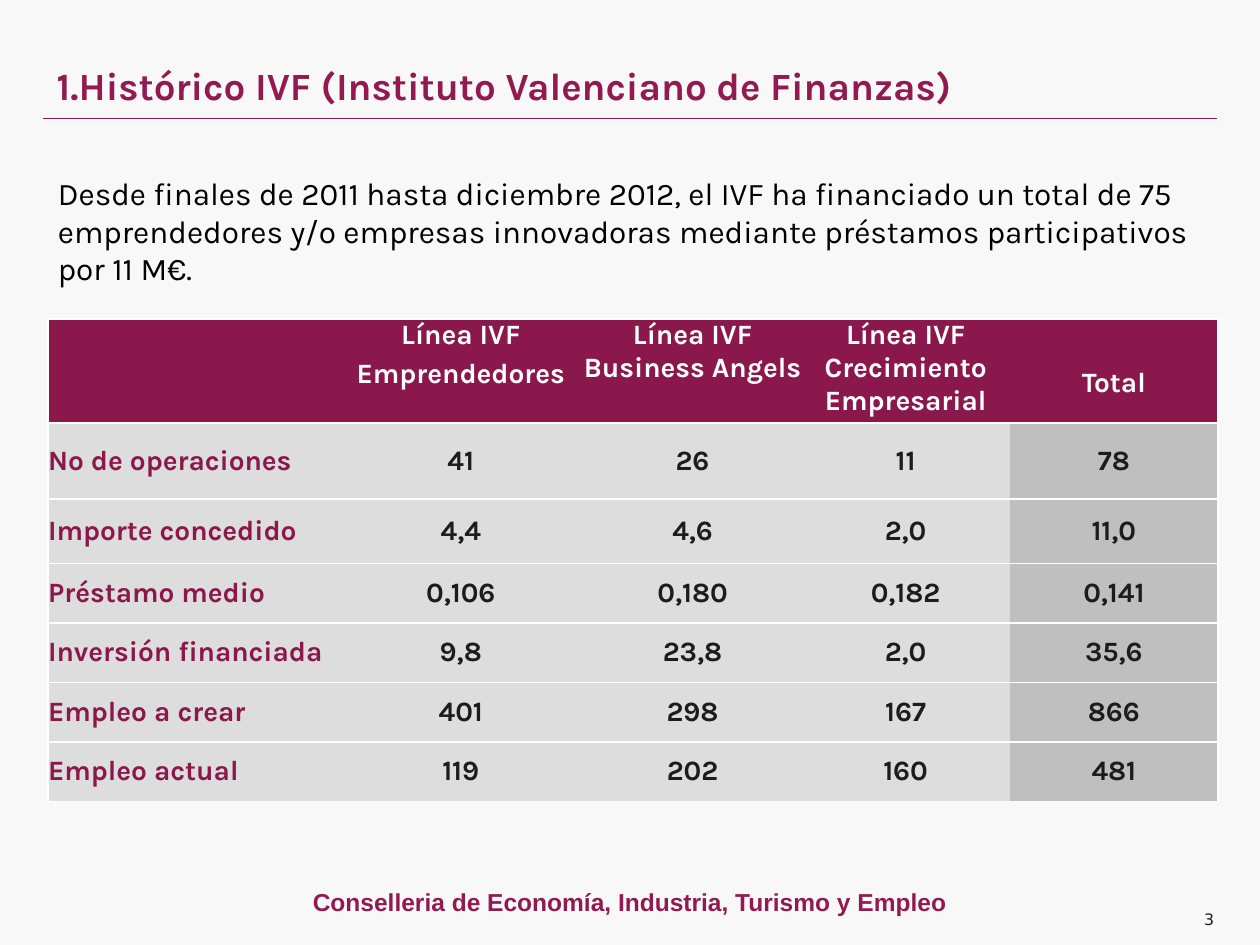
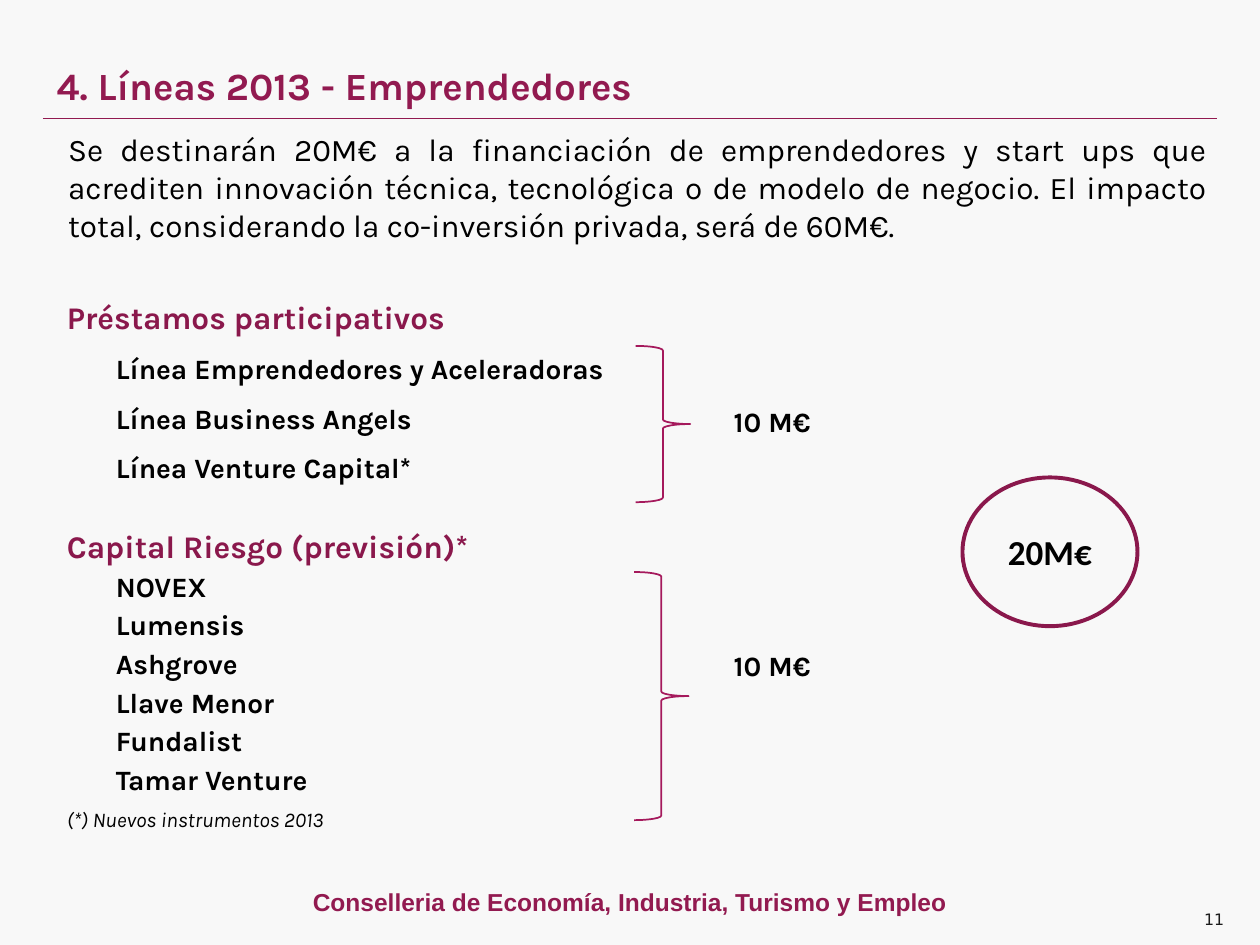
from lxml.etree import SubElement
from pptx import Presentation
from pptx.dml.color import RGBColor
from pptx.enum.shapes import MSO_CONNECTOR, MSO_SHAPE
from pptx.enum.text import MSO_ANCHOR, MSO_AUTO_SIZE, PP_ALIGN
from pptx.oxml.ns import qn
from pptx.util import Pt

LEFT, CENTER, JUSTIFY = PP_ALIGN.LEFT, PP_ALIGN.CENTER, PP_ALIGN.JUSTIFY
TOP, MIDDLE, BOTTOM = MSO_ANCHOR.TOP, MSO_ANCHOR.MIDDLE, MSO_ANCHOR.BOTTOM
NO_AUTOFIT = MSO_AUTO_SIZE.NONE
STRAIGHT = MSO_CONNECTOR.STRAIGHT
OVAL, BRACE = MSO_SHAPE.OVAL, MSO_SHAPE.RIGHT_BRACE

MAROON, WINE, MAGENTA = "921A50", "8A184C", "A5195C"
PAPER, WHITE, BLACK, INK = "F8F8F8", "FFFFFF", "000000", "1C1C1C"
ROW_GREY, TOTAL_GREY = "DDDDDD", "BFBFBF"


def paint(fill, color):
    fill.solid()
    fill.fore_color.rgb = RGBColor.from_string(color)


def write(frame, text, size=16, color=BLACK, font="Karla", bold=False, italic=False,
          align=LEFT, before=0, spacing=1.0, indent=None):
    paragraph = frame.paragraphs[0]
    if paragraph.runs:
        paragraph = frame.add_paragraph()
    paragraph.alignment = align
    paragraph.space_before = Pt(before)
    paragraph.line_spacing = spacing
    if indent is not None:
        properties = paragraph._p.get_or_add_pPr()
        properties.set("marL", str(int(Pt(indent))))
        properties.set("indent", "0")
        SubElement(properties, qn("a:buNone"))
    run = paragraph.add_run()
    run.text = text
    run.font.name = font
    run.font.size = Pt(size)
    run.font.bold = bold
    run.font.italic = italic
    paint(run.font.fill, color)


deck = Presentation()
deck.slide_width, deck.slide_height = Pt(720), Pt(540)
paint(deck.slide_master.background.fill, PAPER)
history = deck.slides.add_slide(deck.slide_layouts[5])
funding = deck.slides.add_slide(deck.slide_layouts[1])

for slide, heading, number in (
    (history, "1.Histórico IVF (Instituto Valenciano de Finanzas)", "3"),
    (funding, "4. Líneas 2013 - Emprendedores", "11"),
):
    title = slide.shapes.title
    title.left, title.top, title.width, title.height = Pt(25.2), Pt(36.7), Pt(673), Pt(24)
    title.text_frame.auto_size = NO_AUTOFIT
    title.text_frame.vertical_anchor = MIDDLE
    write(title.text_frame, heading, size=22, color=MAROON, bold=True)

    divider = slide.shapes.add_connector(STRAIGHT, Pt(24.5), Pt(67.7), Pt(695.5), Pt(67.7))
    paint(divider.line.fill, MAROON)
    divider.line.width = Pt(0.5)
    SubElement(divider._element.spPr, qn("a:effectLst"))

    department = slide.shapes.add_textbox(Pt(154), Pt(503.3), Pt(412), Pt(24)).text_frame
    department.word_wrap = True
    write(department, "Conselleria de Economía, Industria, Turismo y Empleo",
          size=14, color=MAROON, font="Arial", bold=True, align=CENTER)

    page = slide.shapes.add_textbox(Pt(681), Pt(516.2), Pt(32.5), Pt(24)).text_frame
    page.word_wrap = True
    write(page, number, size=9, color=INK, font="DejaVu Sans")

summary = history.shapes.add_textbox(Pt(26), Pt(95.8), Pt(664.6), Pt(73)).text_frame
summary.word_wrap = True
write(summary, "Desde finales de 2011 hasta diciembre 2012, el IVF ha financiado un total de 75 "
      "emprendedores y/o empresas innovadoras mediante préstamos participativos por 11 M€.", size=18)

results = (
    ("", "Línea IVF\nEmprendedores", "Línea IVF Business Angels",
     "Línea IVF Crecimiento Empresarial", "Total"),
    ("Nº de operaciones", "41", "26", "11", "78"),
    ("Importe concedido", "4,4", "4,6", "2,0", "11,0"),
    ("Préstamo medio", "0,106", "0,180", "0,182", "0,141"),
    ("Inversión financiada", "9,8", "23,8", "2,0", "35,6"),
    ("Empleo a crear", "401", "298", "167", "866"),
    ("Empleo actual", "119", "202", "160", "481"),
)
column_widths = (165.6, 140.4, 124.5, 119, 119)
row_heights = (59.4, 43.4, 36.8, 34, 34, 34, 34)
last = len(column_widths) - 1
table = history.shapes.add_table(
    len(row_heights), len(column_widths), Pt(27.5), Pt(182.4),
    Pt(sum(column_widths)), Pt(sum(row_heights))).table
for column, width in zip(table.columns, column_widths):
    column.width = Pt(width)
for row, height in zip(table.rows, row_heights):
    row.height = Pt(height)

for r, values in enumerate(results):
    for c, value in enumerate(values):
        cell = table.cell(r, c)
        cell.margin_left = cell.margin_right = cell.margin_top = cell.margin_bottom = 0
        cell.vertical_anchor = MIDDLE if r else TOP
        if value == "Total":
            cell.margin_top = Pt(27)
        borders = cell._tc.get_or_add_tcPr()
        for side, visible in (("lnL", c == 0), ("lnR", c == last), ("lnT", True), ("lnB", True)):
            border = SubElement(borders, qn("a:" + side), w=str(int(Pt(1))))
            if visible:
                SubElement(SubElement(border, qn("a:solidFill")), qn("a:srgbClr"), val=WHITE)
            else:
                SubElement(border, qn("a:noFill"))
        if r == 0:
            background, ink = WINE, WHITE
        else:
            background = TOTAL_GREY if c == last else ROW_GREY
            ink = INK if c else WINE
        paint(cell.fill, background)
        for line in value.splitlines():
            write(cell.text_frame, line, color=ink, bold=True,
                  align=CENTER if c else LEFT, before=3.2)

intro = funding.shapes.add_textbox(Pt(38.9), Pt(77.8), Pt(650.9), Pt(64.8)).text_frame
intro.word_wrap = True
intro.vertical_anchor = BOTTOM
intro.margin_left = intro.margin_right = 0
write(intro, "Se destinarán 20M€ a la financiación de emprendedores y start ups que acrediten "
      "innovación técnica, tecnológica o de modelo de negocio. El impacto total, considerando "
      "la co-inversión privada, será de 60M€.", size=18, align=JUSTIFY)

instruments = funding.placeholders[1]
instruments.left, instruments.top = Pt(31), Pt(166.8)
instruments.width, instruments.height = Pt(375), Pt(328)
programme = instruments.text_frame
programme.auto_size = NO_AUTOFIT
programme.vertical_anchor = TOP
for heading, gap, lines, line_gap, spacing, amount_top in (
    ("Préstamos participativos", 9,
     ("Línea Emprendedores y Aceleradoras", "Línea Business Angels", "Línea Venture Capital*"),
     9, 1.0, 227),
    ("Capital Riesgo (previsión)*", 24.5,
     ("NOVEX", "Lumensis", "Ashgrove", "Llave Menor", "Fundalist", "Tamar Venture"),
     4.8, 0.9, 366.5),
):
    write(programme, heading, size=18, color=WINE, bold=True, before=gap, indent=0)
    for line in lines:
        write(programme, line, bold=True, before=line_gap, spacing=spacing, indent=28)
    amount = funding.shapes.add_textbox(Pt(412.2), Pt(amount_top), Pt(80), Pt(27)).text_frame
    amount.word_wrap = True
    amount.vertical_anchor = MIDDLE
    write(amount, "10 M€", bold=True)
write(programme, "(*) Nuevos instrumentos 2013", size=12, italic=True, before=6, indent=0)

for kind, left, top, width, height, color, weight in (
    (OVAL, 550, 272.8, 100, 85, WINE, 2.25),
    (BRACE, 363.2, 197.7, 31.2, 89.3, MAGENTA, 1),
    (BRACE, 362.3, 326.9, 31.2, 141.8, MAGENTA, 1),
):
    outline = funding.shapes.add_shape(kind, Pt(left), Pt(top), Pt(width), Pt(height))
    outline.shadow.inherit = False
    outline.fill.background()
    paint(outline.line.fill, color)
    outline.line.width = Pt(weight)
    if kind == OVAL:
        outline.text_frame.vertical_anchor = MIDDLE
        write(outline.text_frame, "20M€", size=20, font="Calibri", bold=True, align=CENTER)

deck.save("out.pptx")
